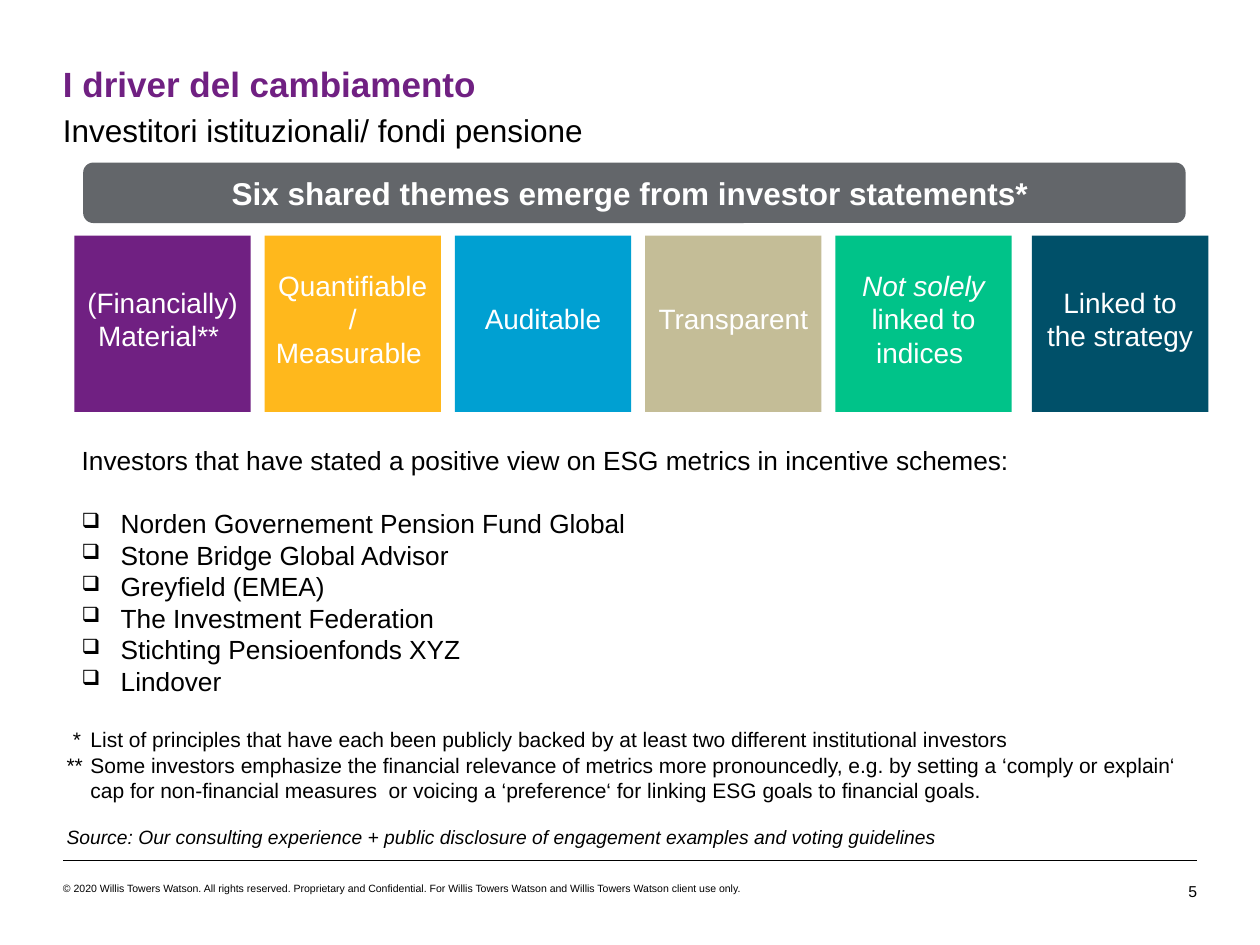
from dataclasses import dataclass

from lxml import etree
from pptx import Presentation
from pptx import util as u
from pptx.dml.color import RGBColor
from pptx.enum import shapes, text
from pptx.oxml.ns import qn


@dataclass(frozen=True)
class Theme:
    font: str = "Arial"
    ink: str = "000000"
    white: str = "FFFFFF"
    purple: str = "702082"
    yellow: str = "FFB81C"
    blue: str = "00A0D2"
    sand: str = "C4BD97"
    green: str = "00C389"
    teal: str = "005069"
    grey: str = "63666A"
    title: float = 20
    heading: float = 18
    tile: float = 16
    body: float = 15
    note: float = 12
    source: float = 11
    page: float = 9
    legal: float = 6


T = Theme()
ALIGN = text.PP_ALIGN
ANCHOR = text.MSO_ANCHOR


@dataclass(frozen=True)
class Run:
    text: str
    size: float
    color: str = T.ink
    bold: bool = False
    italic: bool = False


@dataclass(frozen=True)
class Para:
    runs: tuple[Run, ...]
    align: ALIGN = ALIGN.LEFT
    before: float = 0
    after: float = 0
    margin: float = 0
    indent: float = 0
    bullet: str = ""


@dataclass(frozen=True)
class Box:
    left: float
    top: float
    width: float
    height: float

    def inches(self) -> tuple[u.Length, ...]:
        return tuple(u.Inches(v) for v in (self.left, self.top, self.width, self.height))


@dataclass(frozen=True)
class Tile:
    left: float
    color: str
    runs: tuple[Run, ...]


def write(tf, paras: list[Para], insets: tuple = (0.1, 0.05, 0.1, 0.05),
          anchor=ANCHOR.TOP) -> None:
    sides = ("margin_left", "margin_top", "margin_right", "margin_bottom")
    formats = {"word_wrap": True, "vertical_anchor": anchor}
    formats.update((side, u.Inches(v)) for side, v in zip(sides, insets))
    for name, value in formats.items():
        setattr(tf, name, value)
    for i, para in enumerate(paras):
        p = tf.add_paragraph() if i else tf.paragraphs[0]
        spacing = {"alignment": para.align, "space_before": u.Pt(para.before),
                   "space_after": u.Pt(para.after)}
        for name, value in spacing.items():
            setattr(p, name, value)
        pPr = p._p.get_or_add_pPr()
        pPr.set("marL", str(u.Inches(para.margin)))
        pPr.set("indent", str(u.Inches(para.indent)))
        if para.bullet:
            etree.SubElement(pPr, qn("a:buSzPct")).set("val", "80000")
            etree.SubElement(pPr, qn("a:buChar")).set("char", para.bullet)
        for run in para.runs:
            r = p.add_run()
            r.text = run.text
            font = {"name": T.font, "size": u.Pt(run.size),
                    "bold": run.bold, "italic": run.italic}
            for name, value in font.items():
                setattr(r.font, name, value)
            r.font.color.rgb = RGBColor.from_string(run.color)


def add_text(s, box: Box, paras: list[Para], **frame) -> None:
    write(s.shapes.add_textbox(*box.inches()).text_frame, paras, **frame)


def add_panel(s, kind, box: Box, color: str, para: Para, **frame) -> None:
    sp = s.shapes.add_shape(kind, *box.inches())
    sp.shadow.inherit = False
    sp.fill.solid()
    sp.fill.fore_color.rgb = RGBColor.from_string(color)
    sp.line.fill.background()
    write(sp.text_frame, [para], anchor=ANCHOR.MIDDLE, **frame)


def add_rule(s, left: float, right: float, y: float) -> None:
    ends = (u.Inches(v) for v in (left, y, right, y))
    cx = s.shapes.add_connector(shapes.MSO_CONNECTOR.STRAIGHT, *ends)
    cx.line.color.rgb = RGBColor.from_string(T.ink)
    cx.line.width = u.Pt(0.25)
    etree.SubElement(cx._element.spPr, qn("a:effectLst"))


def label(words: str, italic: bool = False) -> Run:
    return Run(words, T.tile, T.white, italic=italic)


FLUSH = (0, 0, 0, 0)
TILE_INSETS = (0.08, 0.08, 0.08, 0.16)
FIRST, STEP, SIDE = 0.59, 1.51, 1.4
TILES = [
    Tile(FIRST, T.purple, (label("(Financially) Material** "),)),
    Tile(FIRST + STEP, T.yellow, (label("Quantifiable/ Measurable "),)),
    Tile(FIRST + 2 * STEP, T.blue, (label("Auditable"),)),
    Tile(FIRST + 3 * STEP, T.sand, (label("Transparent"),)),
    Tile(FIRST + 4 * STEP, T.green, (label("Not solely", True), label(" linked to indices "))),
    Tile(8.19, T.teal, (label("Linked to the strategy"),)),
]
INVESTORS = [
    "Norden Governement Pension Fund Global",
    "Stone Bridge Global Advisor",
    "Greyfield (EMEA)",
    "The Investment Federation",
    "Stichting Pensioenfonds XYZ",
    "Lindover",
]
NOTES = [
    ("*\tList of principles that have each been publicly backed by at least two "
     "different institutional investors", -0.14),
    ("**\tSome investors emphasize the financial relevance of metrics more pronouncedly, "
     "e.g. by setting a ‘comply or explain‘ cap for non-financial measures  or voicing a "
     "‘preference‘ for linking ESG goals to financial goals.", -0.19),
]


def main() -> None:
    prs = Presentation()
    prs.slide_width, prs.slide_height = u.Inches(10), u.Inches(7.5)
    s = prs.slides.add_slide(prs.slide_layouts[6])

    add_rule(s, 0.5, 9.5, 6.83)
    add_text(s, Box(0.5, 0.5, 9, 0.34),
             [Para((Run("I driver del cambiamento", T.title, T.purple, bold=True),))],
             insets=FLUSH)
    add_text(s, Box(0.5, 0.88, 9, 0.3),
             [Para((Run("Investitori istituzionali/ fondi pensione", T.heading),))],
             insets=FLUSH)

    banner = Run("Six shared themes emerge from investor statements* ",
                 T.heading, T.white, bold=True)
    add_panel(s, shapes.MSO_SHAPE.ROUNDED_RECTANGLE, Box(0.66, 1.29, 8.75, 0.48),
              T.grey, Para((banner,), ALIGN.CENTER))
    for tile in TILES:
        add_panel(s, shapes.MSO_SHAPE.RECTANGLE, Box(tile.left, 1.87, SIDE, SIDE),
                  tile.color, Para(tile.runs, ALIGN.CENTER, after=8), insets=TILE_INSETS)

    intro = Para((Run("Investors that have stated a positive view on ESG metrics "
                      "in incentive schemes:", T.body),))
    bullets = [Para((Run(name, T.body),), before=0 if i else 18,
                    margin=0.31, indent=-0.31, bullet="❑")
               for i, name in enumerate(INVESTORS)]
    add_text(s, Box(0.55, 3.48, 9.07, 2.42), [intro, *bullets])

    add_text(s, Box(0.43, 5.72, 9.03, 0.71),
             [Para((Run(note, T.note),), margin=0.19, indent=indent)
              for note, indent in NOTES])
    add_text(s, Box(0.43, 6.5, 9.07, 0.29),
             [Para((Run("Source: Our consulting experience + public disclosure of engagement "
                        "examples and voting guidelines", T.source, italic=True),))])
    add_text(s, Box(0.5, 7, 5.77, 0.1),
             [Para((Run("© 2020 Willis Towers Watson. All rights reserved. Proprietary and "
                        "Confidential. For Willis Towers Watson and Willis Towers Watson "
                        "client use only.", T.legal),))], insets=FLUSH)
    add_text(s, Box(9.08, 7, 0.42, 0.15), [Para((Run("5", T.page),), ALIGN.RIGHT)],
             insets=FLUSH, anchor=ANCHOR.BOTTOM)
    prs.save("out.pptx")


if __name__ == "__main__":
    main()
